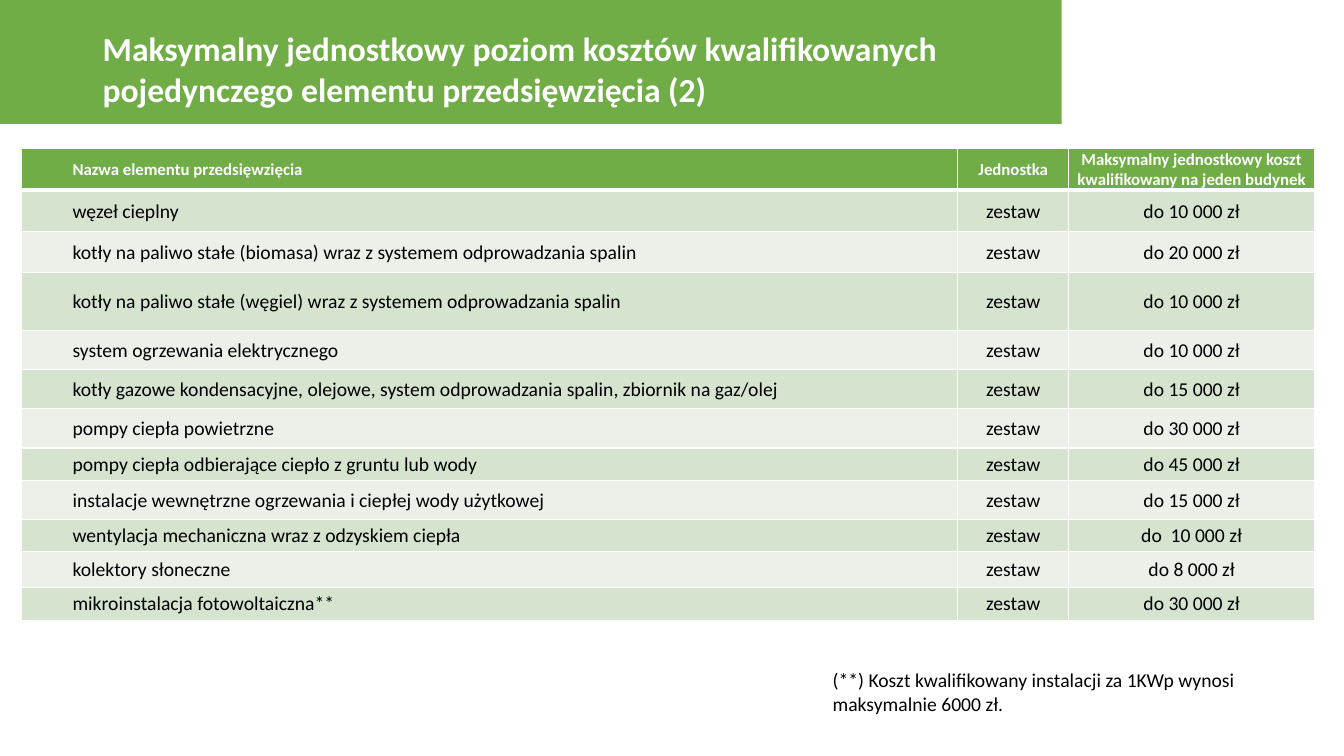
from dataclasses import dataclass

from lxml import etree
from pptx import Presentation
from pptx.dml.color import RGBColor
from pptx.enum.shapes import MSO_SHAPE
from pptx.enum.text import MSO_ANCHOR, MSO_AUTO_SIZE, PP_ALIGN
from pptx.oxml.ns import qn
from pptx.util import Inches, Pt

RECTANGLE = MSO_SHAPE.RECTANGLE
MIDDLE, TOP = MSO_ANCHOR.MIDDLE, MSO_ANCHOR.TOP
LEFT, CENTER = PP_ALIGN.LEFT, PP_ALIGN.CENTER
FIT_SHAPE = MSO_AUTO_SIZE.SHAPE_TO_FIT_TEXT
NO_FIT = MSO_AUTO_SIZE.NONE


@dataclass(frozen=True)
class Theme:
    """Colours, font and type sizes of the slide."""
    font: str = "Calibri"
    green: str = "70AD47"
    bands: tuple = ("D5E3CF", "EBF1E9")
    white: str = "FFFFFF"
    black: str = "000000"
    title_size: int = 24
    body_size: int = 14
    header_size: int = 12
    thin_border: int = 1
    thick_border: int = 3


THEME = Theme()
TITLE = ("Maksymalny jednostkowy poziom kosztów kwalifikowanych "
         "pojedynczego elementu przedsięwzięcia (2)")
FOOTNOTE = "(**) Koszt kwalifikowany instalacji za 1KWp wynosi maksymalnie 6000 zł."
HEADER = ("Nazwa elementu przedsięwzięcia", "Jednostka",
          "Maksymalny jednostkowy koszt kwalifikowany na jeden budynek")
UNIT = "zestaw"
COSTS = (
    ("węzeł cieplny", "do 10 000 zł"),
    ("kotły na paliwo stałe (biomasa) wraz z systemem odprowadzania spalin", "do 20 000 zł"),
    ("kotły na paliwo stałe (węgiel) wraz z systemem odprowadzania spalin", "do 10 000 zł"),
    ("system ogrzewania elektrycznego", "do 10 000 zł"),
    ("kotły gazowe kondensacyjne, olejowe, system odprowadzania spalin, zbiornik na gaz/olej",
     "do 15 000 zł"),
    ("pompy ciepła powietrzne", "do 30 000 zł"),
    ("pompy ciepła odbierające ciepło z gruntu lub wody", "do 45 000 zł"),
    ("instalacje wewnętrzne ogrzewania i ciepłej wody użytkowej", "do 15 000 zł"),
    ("wentylacja mechaniczna wraz z odzyskiem ciepła", "do  10 000 zł"),
    ("kolektory słoneczne", "do 8 000 zł"),
    ("mikroinstalacja fotowoltaiczna**", "do 30 000 zł"),
)
COLUMN_WIDTHS = (9.29, 1.1, 2.44)
ROW_HEIGHTS = (0.41, 0.41, 0.41, 0.57, 0.39, 0.39, 0.39, 0.32, 0.39, 0.32, 0.35, 0.33)


def set_attributes(target, values):
    """Set every named attribute on the target."""
    for name, value in values.items():
        setattr(target, name, value)


def write_text(frame, text, size, color, bold=False, align=LEFT):
    """Fill a text frame with one formatted paragraph."""
    paragraph = frame.paragraphs[0]
    paragraph.alignment = align
    run = paragraph.add_run()
    run.text = text
    set_attributes(run.font, {"name": THEME.font, "size": Pt(size), "bold": bold})
    run.font.color.rgb = RGBColor.from_string(color)
    return paragraph


def add_text(slide, box, text, size, color, bold=False, anchor=TOP, auto_size=NO_FIT):
    """Place a wrapping text box."""
    frame = slide.shapes.add_textbox(*map(Inches, box)).text_frame
    set_attributes(frame, {"word_wrap": True, "vertical_anchor": anchor,
                           "auto_size": auto_size})
    write_text(frame, text, size, color, bold)


def add_title_band(slide, box):
    """Draw the green band with the slide title inside it."""
    left, top, width, height = box
    band = slide.shapes.add_shape(RECTANGLE, *map(Inches, box))
    band.shadow.inherit = False
    band.fill.solid()
    band.fill.fore_color.rgb = RGBColor.from_string(THEME.green)
    band.line.fill.background()
    title_box = (left + 0.92, top + 0.21, width - 1, height - 0.29)
    add_text(slide, title_box, TITLE, THEME.title_size, THEME.white, True, MIDDLE)


def add_borders(cell, widths):
    """Give the four sides of a cell white lines of the given widths."""
    properties = cell._tc.get_or_add_tcPr()
    for side, width in zip("LRTB", widths):
        line = etree.SubElement(properties, qn(f"a:ln{side}"), w=str(Pt(width)))
        fill = etree.SubElement(line, qn("a:solidFill"))
        etree.SubElement(fill, qn("a:srgbClr"), val=THEME.white)


def format_cell(cell, text, row, column):
    """Write and style one table cell by its row and column."""
    is_header = row == 0
    thin, thick = THEME.thin_border, THEME.thick_border
    add_borders(cell, (thin, thin, thick if row == 1 else thin, thick if is_header else thin))
    cell.fill.solid()
    fill = THEME.green if is_header else THEME.bands[(row - 1) % 2]
    cell.fill.fore_color.rgb = RGBColor.from_string(fill)
    set_attributes(cell, {"vertical_anchor": MIDDLE, "margin_left": Inches(0.01),
                          "margin_right": Inches(0.01), "margin_top": Inches(0.01),
                          "margin_bottom": 0})
    size = THEME.header_size if is_header else THEME.body_size
    color = THEME.white if is_header else THEME.black
    align = CENTER if column else LEFT
    paragraph = write_text(cell.text_frame, text, size, color, is_header, align)
    if column == 0:
        paragraph.level = 1
        properties = paragraph._p.get_or_add_pPr()
        properties.set("marL", str(Inches(0.5)))
        properties.set("indent", "0")


def add_cost_table(slide, box):
    """Build the banded table of maximum costs."""
    rows = [HEADER] + [(name, UNIT, cost) for name, cost in COSTS]
    frame = slide.shapes.add_table(len(rows), len(HEADER), *map(Inches, box))
    table = frame.table
    for column, width in zip(table.columns, COLUMN_WIDTHS):
        column.width = Inches(width)
    for row, height in zip(table.rows, ROW_HEIGHTS):
        row.height = Inches(height)
    for row_index, texts in enumerate(rows):
        for column_index, text in enumerate(texts):
            format_cell(table.cell(row_index, column_index), text, row_index, column_index)


def add_footnote(slide, box):
    """Place the note on photovoltaic costs."""
    add_text(slide, box, FOOTNOTE, THEME.body_size, THEME.black, auto_size=FIT_SHAPE)


def main():
    """Build and save the slide."""
    presentation = Presentation()
    set_attributes(presentation, {"slide_width": Inches(13.33), "slide_height": Inches(7.5)})
    slide = presentation.slides.add_slide(presentation.slide_layouts[6])
    add_title_band(slide, (0, 0, 10.53, 1.23))
    add_cost_table(slide, (0.21, 1.47, sum(COLUMN_WIDTHS), sum(ROW_HEIGHTS)))
    add_footnote(slide, (8.16, 6.58, 4.88, 0.57))
    presentation.save("out.pptx")


if __name__ == "__main__":
    main()
